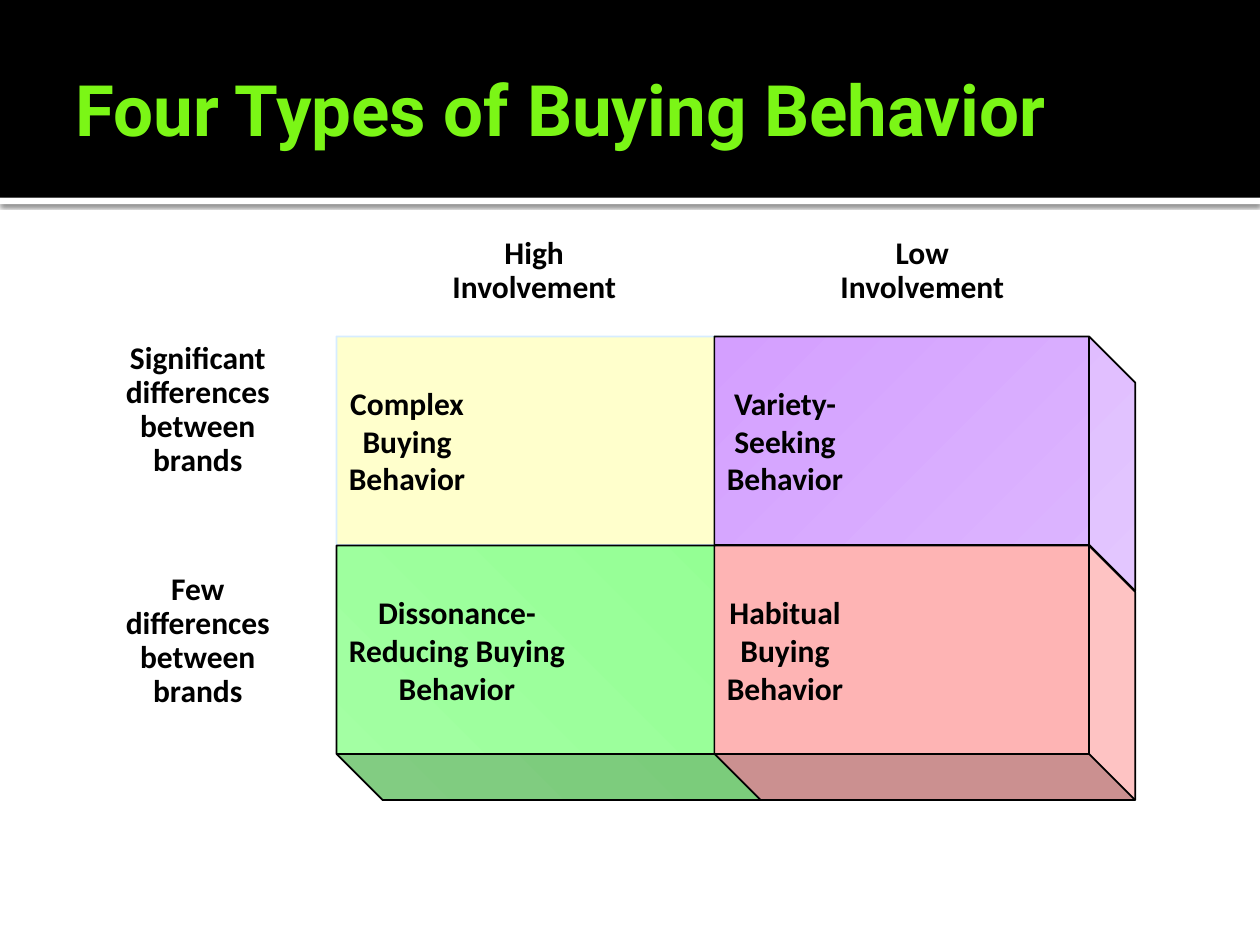
from dataclasses import dataclass
from typing import Optional

from lxml import etree
from pptx import Presentation
from pptx.dml.color import RGBColor
from pptx.enum.shapes import MSO_SHAPE
from pptx.enum.text import MSO_ANCHOR, MSO_AUTO_SIZE, PP_ALIGN
from pptx.oxml.ns import qn
from pptx.util import Inches, Pt

CUBE, RECTANGLE = MSO_SHAPE.CUBE, MSO_SHAPE.RECTANGLE
MIDDLE, TOP = MSO_ANCHOR.MIDDLE, MSO_ANCHOR.TOP
CENTER, LEFT = PP_ALIGN.CENTER, PP_ALIGN.LEFT
GROW, FIXED = MSO_AUTO_SIZE.SHAPE_TO_FIT_TEXT, MSO_AUTO_SIZE.NONE

BLACK = RGBColor(0x00, 0x00, 0x00)
WHITE = RGBColor(0xFF, 0xFF, 0xFF)
LIME = RGBColor(0x7B, 0xF6, 0x16)
CREAM = RGBColor(0xFF, 0xFF, 0xCC)
PALE_BLUE = RGBColor(0xD6, 0xEC, 0xFF)
GREEN_LIGHT = RGBColor(0xA3, 0xFF, 0xA3)
GREEN = RGBColor(0x94, 0xFF, 0x94)
PURPLE = RGBColor(0xD4, 0x9F, 0xFF)
PURPLE_LIGHT = RGBColor(0xDD, 0xB8, 0xFF)
PINK = RGBColor(0xFE, 0xB4, 0xB4)

SLIDE_W, SLIDE_H = 10, 7.5
HEADER_H, RULE_H = 1.57, 0.05
GRID_LEFT = GRID_TOP = 2.67
COLUMN_STEP, ROW_STEP = 3, 1.66
CUBE_WIDTHS, CUBE_H = (3.4, 3.34), 2.02
CUBE_DEPTH = 0.182
COLUMN_LABEL_LEFT, COLUMN_LABEL_STEP = 3.17, 3.08
ROW_LABEL_STEP = 1.83

LABEL_FONT = {"name": "Calibri", "size": Pt(18), "bold": True}
TITLE_FONT = {"name": "Roboto", "size": Pt(40.5), "bold": True}


@dataclass
class Behavior:
    column: int
    row: int
    lines: tuple[str, ...]
    color: RGBColor
    end_color: Optional[RGBColor] = None
    angle: int = 0
    outline: RGBColor = BLACK


@dataclass
class AxisLabel:
    left: float
    top: float
    width: float
    height: float
    lines: tuple[str, ...]


BEHAVIORS = (
    Behavior(0, 0, ("Complex", "Buying", "Behavior"), CREAM, outline=PALE_BLUE),
    Behavior(0, 1, ("Dissonance-", "Reducing Buying", "Behavior"),
             GREEN_LIGHT, GREEN, 45),
    Behavior(1, 0, ("Variety-", "Seeking", "Behavior"), PURPLE, PURPLE_LIGHT, 315),
    Behavior(1, 1, ("Habitual", "Buying", "Behavior"), PINK),
)
ROW_LABELS = tuple(
    AxisLabel(0.58, GRID_TOP + row * ROW_LABEL_STEP, 1.98, 1.53,
              (amount, "differences", "between", "brands"))
    for row, amount in enumerate(("Significant", "Few"))
)
COLUMN_LABELS = tuple(
    AxisLabel(COLUMN_LABEL_LEFT + column * COLUMN_LABEL_STEP, 1.83, 2.14, 0.82,
              (level, "Involvement"))
    for column, level in enumerate(("High", "Low"))
)


def apply_format(target, values: dict) -> None:
    for attribute, value in values.items():
        setattr(target, attribute, value)


def write_lines(frame, lines: tuple[str, ...], font: dict, color: RGBColor,
                alignment=CENTER, spacing: float = 1.0) -> None:
    for index, line in enumerate(lines):
        paragraph = frame.add_paragraph() if index else frame.paragraphs[0]
        apply_format(paragraph, {"alignment": alignment, "line_spacing": spacing})
        run = paragraph.add_run()
        run.text = line
        apply_format(run.font, font)
        run.font.color.rgb = color


def add_band(slide, top: float, height: float, color: RGBColor):
    band = slide.shapes.add_shape(
        RECTANGLE, 0, Inches(top), Inches(SLIDE_W), Inches(height))
    band.shadow.inherit = False
    band.fill.solid()
    band.fill.fore_color.rgb = color
    band.line.fill.background()
    return band


def cast_shadow(band) -> None:
    effects = band._element.spPr.find(qn("a:effectLst"))
    shadow = etree.SubElement(effects, qn("a:outerShdw"), blurRad=str(Pt(2.5)),
                              dist=str(Pt(0.8)), dir="5400000", rotWithShape="0")
    shade = etree.SubElement(shadow, qn("a:srgbClr"), val=str(BLACK))
    etree.SubElement(shade, qn("a:alpha"), val="60000")


def fill_cube(cube, behavior: Behavior) -> None:
    if behavior.end_color is None:
        cube.fill.solid()
        cube.fill.fore_color.rgb = behavior.color
        return
    cube.fill.gradient()
    cube.fill.gradient_angle = behavior.angle
    for stop, color in zip(cube.fill.gradient_stops,
                           (behavior.color, behavior.end_color)):
        stop.color.rgb = color
    cube._element.spPr.find(qn("a:gradFill")).set("rotWithShape", "0")


def add_behavior(slide, behavior: Behavior) -> None:
    width = CUBE_WIDTHS[behavior.column]
    center_x = GRID_LEFT + behavior.column * COLUMN_STEP + width / 2
    center_y = GRID_TOP + behavior.row * ROW_STEP + CUBE_H / 2
    cube = slide.shapes.add_shape(
        CUBE, Inches(center_x - CUBE_H / 2), Inches(center_y - width / 2),
        Inches(CUBE_H), Inches(width))
    cube.rotation = 90
    cube.adjustments[0] = CUBE_DEPTH
    cube.shadow.inherit = False
    fill_cube(cube, behavior)
    cube.line.color.rgb = behavior.outline
    cube.line.width = Pt(1)
    frame = cube.text_frame
    apply_format(frame, {"word_wrap": False, "vertical_anchor": MIDDLE})
    body = frame._txBody.bodyPr
    body.set("vert", "eaVert")
    body.set("rot", "10800000")
    write_lines(frame, behavior.lines, LABEL_FONT, BLACK)


def add_axis_label(slide, label: AxisLabel) -> None:
    box = slide.shapes.add_textbox(
        Inches(label.left), Inches(label.top),
        Inches(label.width), Inches(label.height))
    apply_format(box.text_frame, {"word_wrap": False, "auto_size": GROW,
                                  "vertical_anchor": TOP})
    write_lines(box.text_frame, label.lines, LABEL_FONT, BLACK, spacing=0.9)


def place_title(slide, text: str) -> None:
    title = slide.shapes.title
    apply_format(title, {"left": Inches(0.5), "top": Inches(0.17),
                         "width": Inches(9), "height": Inches(1.37)})
    apply_format(title.text_frame, {
        "word_wrap": True, "auto_size": FIXED, "vertical_anchor": MIDDLE,
        "margin_left": Inches(0.1), "margin_right": Inches(0.05),
        "margin_top": Inches(0.05), "margin_bottom": Inches(0.05)})
    write_lines(title.text_frame, (text,), TITLE_FONT, LIME, LEFT)
    slide.shapes._spTree.append(title._element)


def main() -> None:
    deck = Presentation()
    deck.slide_width, deck.slide_height = Inches(SLIDE_W), Inches(SLIDE_H)
    slide = deck.slides.add_slide(deck.slide_layouts.get_by_name("Title Only"))
    cast_shadow(add_band(slide, HEADER_H, RULE_H, WHITE))
    add_band(slide, 0, HEADER_H, BLACK)
    for behavior in BEHAVIORS:
        add_behavior(slide, behavior)
    for label in ROW_LABELS + COLUMN_LABELS:
        add_axis_label(slide, label)
    place_title(slide, "Four Types of Buying Behavior")
    deck.save("out.pptx")


if __name__ == "__main__":
    main()
